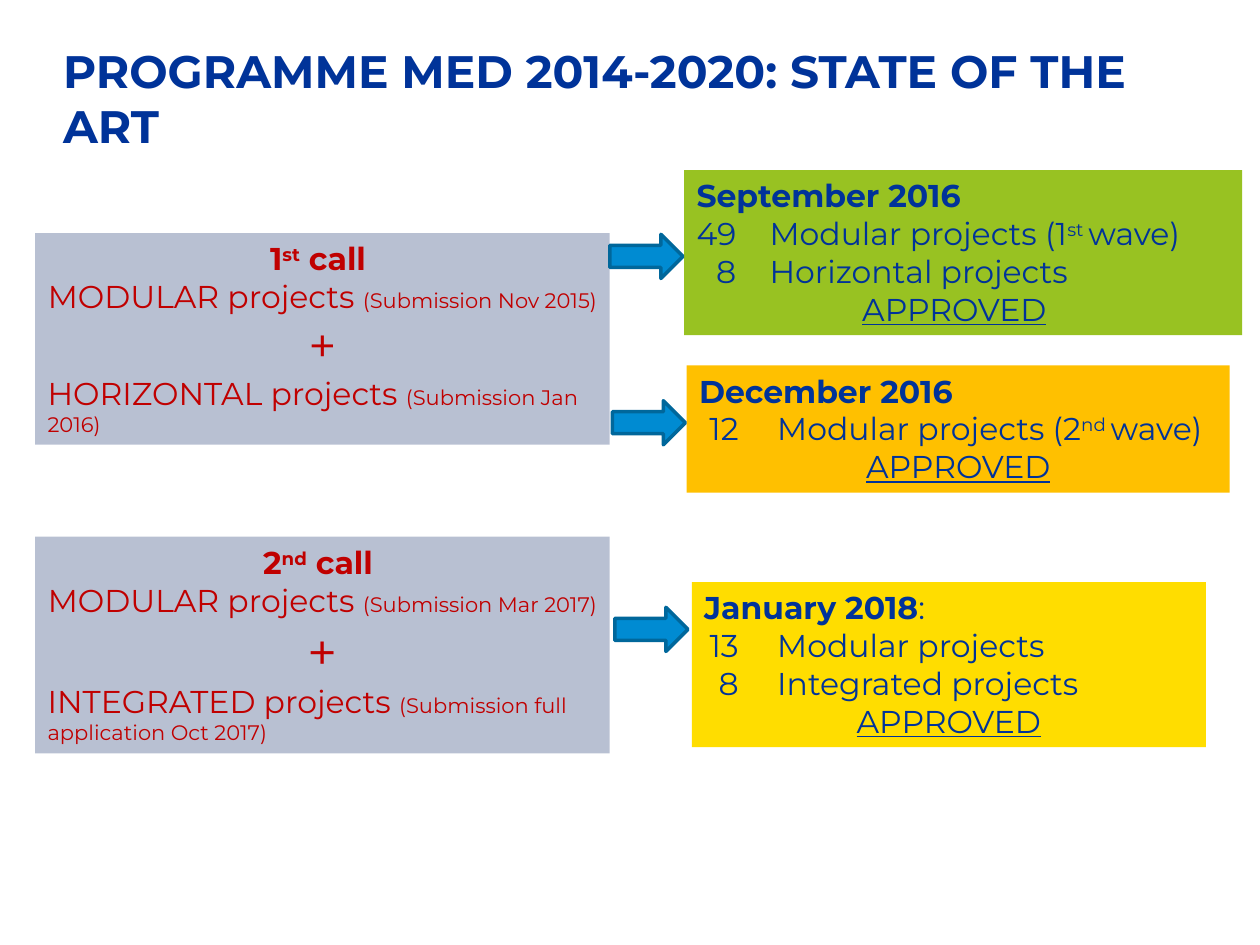
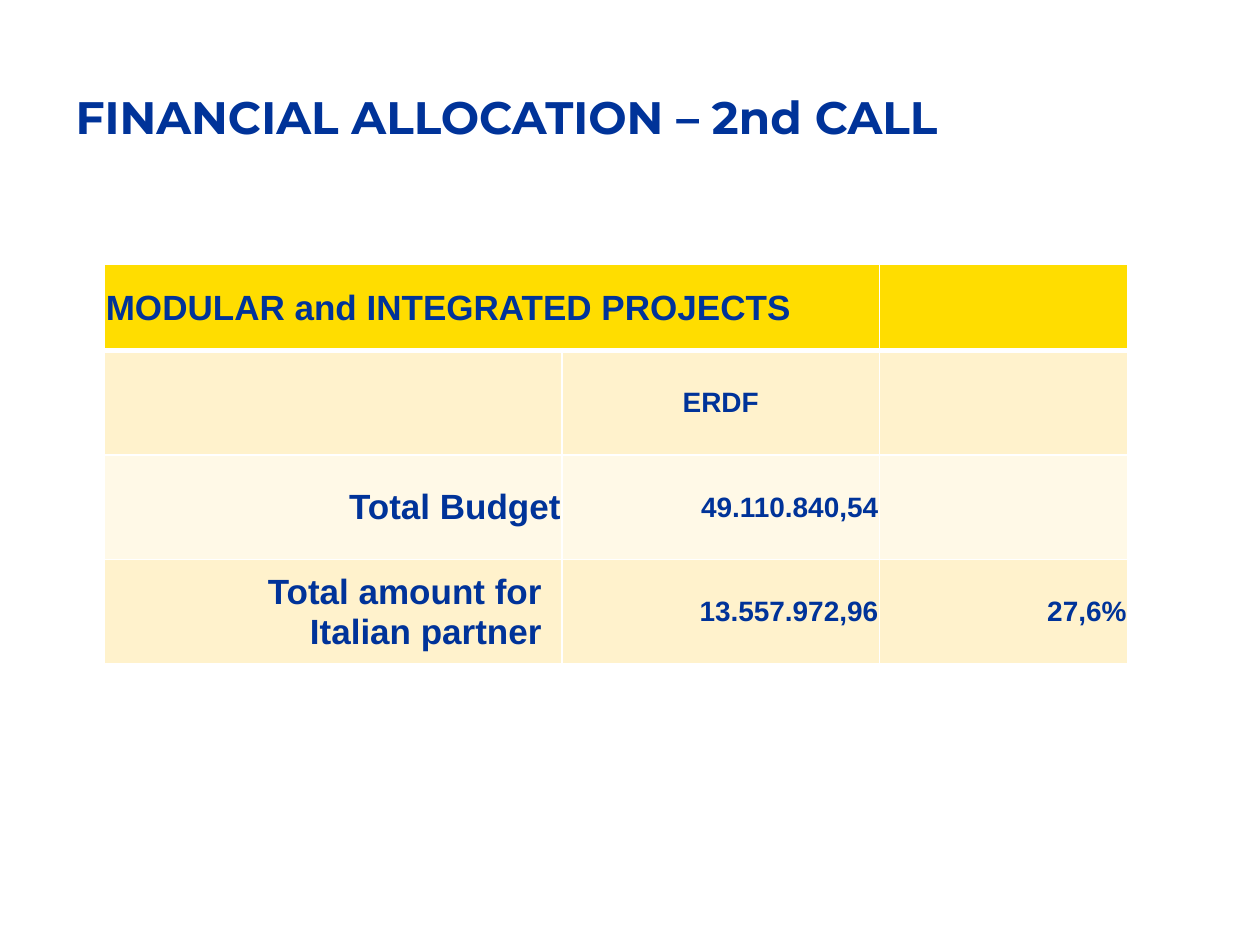
from dataclasses import dataclass, field
from itertools import product

from lxml.etree import SubElement
from pptx import Presentation
from pptx.dml.color import RGBColor
from pptx.enum.shapes import MSO_SHAPE as Shape
from pptx.enum.text import MSO_ANCHOR as Anchor, MSO_AUTO_SIZE as AutoSize, PP_ALIGN as Align
from pptx.oxml.ns import qn
from pptx.util import Inches, Pt


@dataclass(frozen=True)
class Theme:
    heading_font: str = "Montserrat"
    table_font: str = "Arial"
    navy: str = "003399"
    red: str = "C00000"
    call_fill: str = "002060"
    call_opacity: int = 28
    green: str = "98C222"
    orange: str = "FFC000"
    yellow: str = "FFDD00"
    arrow: str = "008BD2"
    arrow_edge: str = "00679B"
    row_dark: str = "FFF2CC"
    row_light: str = "FFF9E7"
    white: str = "FFFFFF"
    title_size: int = 26
    body_size: int = 18
    note_size: int = 12
    label_size: int = 20
    amount_size: int = 16


THEME = Theme()
BOLD = {"bold": True}
UNDERLINED = {"underline": True}
NOTE = {"size": Pt(THEME.note_size)}
RAISED = {"raised": True}
RAISED_BOLD = {"raised": True, "bold": True}


@dataclass
class Line:
    runs: list
    align: Align = Align.LEFT
    tabs: tuple = ()
    right_indent: float = 0
    base: dict = field(default_factory=dict)


def color(value):
    return RGBColor.from_string(value)


def apply(target, values):
    for name, value in values.items():
        setattr(target, name, value)


def set_tabs(properties, stops):
    tab_list = SubElement(properties, qn("a:tabLst"))
    for position, alignment in zip(stops, ("r", "l")):
        SubElement(tab_list, qn("a:tab"), pos=str(Inches(position)), algn=alignment)


def add_run(paragraph, text, ink, style):
    run = paragraph.add_run()
    run.text = text
    style = dict(style)
    if style.pop("raised", False):
        run.font._element.set("baseline", "30000")
    apply(run.font, style)
    run.font.color.rgb = color(ink)


def write(frame, lines, ink, defaults):
    for index, line in enumerate(lines):
        paragraph = frame.add_paragraph() if index else frame.paragraphs[0]
        paragraph.alignment = line.align
        properties = paragraph._p.get_or_add_pPr()
        if line.right_indent:
            properties.set("marR", str(Inches(line.right_indent)))
        if line.tabs:
            set_tabs(properties, line.tabs)
        for text, style in line.runs:
            if text == "\n":
                paragraph.add_line_break()
            else:
                add_run(paragraph, text, ink, {**defaults, **line.base, **style})


def add_titled_slide(deck, text, left, top, width):
    slide = deck.slides.add_slide(deck.slide_layouts[5])
    title = slide.shapes.title
    apply(title, {"left": Inches(left), "top": Inches(top),
                  "width": Inches(width), "height": Inches(1.25)})
    apply(title.text_frame, {"vertical_anchor": Anchor.MIDDLE, "word_wrap": True,
                             "auto_size": AutoSize.NONE})
    write(title.text_frame, [Line([(text, BOLD)])], THEME.navy,
          {"name": THEME.heading_font, "size": Pt(THEME.title_size)})
    return slide


def add_filled(slide, preset, box, fill):
    shape = slide.shapes.add_shape(preset, *map(Inches, box))
    shape.shadow.inherit = False
    shape.fill.solid()
    shape.fill.fore_color.rgb = color(fill)
    shape.line.fill.background()
    return shape


def add_panel(slide, box, fill, ink, lines):
    panel = add_filled(slide, Shape.RECTANGLE, box, fill)
    apply(panel.text_frame, {"vertical_anchor": Anchor.TOP, "word_wrap": True,
                             "auto_size": AutoSize.SHAPE_TO_FIT_TEXT})
    write(panel.text_frame, lines, ink,
          {"name": THEME.heading_font, "size": Pt(THEME.body_size), "bold": False})
    return panel


def add_call(slide, top, height, number, suffix, modular_note, plus_size, second, second_note):
    panel = add_panel(slide, (0.28, top, 4.56, height), THEME.call_fill, THEME.red, [
        Line([(number, BOLD), (suffix, RAISED_BOLD), (" call ", BOLD), ("\n", {}),
              ("MODULAR projects ", {}), (modular_note, NOTE)], Align.CENTER),
        Line([("+", {"size": Pt(plus_size)})], Align.CENTER),
        Line([(f"{second} projects ", {}), (second_note, NOTE)]),
    ])
    fill_color = panel._element.spPr.find(qn("a:solidFill"))[0]
    SubElement(fill_color, qn("a:alpha"), val=str(THEME.call_opacity * 1000))


def add_result(slide, box, fill, heading, counts, tabs, right_indent=0):
    approved = Line([("APPROVED", UNDERLINED)], Align.CENTER, right_indent=right_indent)
    projects = [Line([(f"\t{count} \t", {}), *runs], tabs=tabs) for count, runs in counts]
    add_panel(slide, box, fill, THEME.navy, [Line(heading), *projects, approved])


def add_arrow(slide, left, top):
    arrow = add_filled(slide, Shape.RIGHT_ARROW, (left, top, 0.58, 0.35), THEME.arrow)
    arrow.line.color.rgb = color(THEME.arrow_edge)
    arrow.line.width = Pt(2)


def set_borders(cell, bottom_width):
    properties = cell._tc.get_or_add_tcPr()
    for side, width in zip("LRTB", (1, 1, 1, bottom_width)):
        edge = SubElement(properties, qn(f"a:ln{side}"), w=str(Pt(width)))
        paint = SubElement(edge, qn("a:solidFill"))
        SubElement(paint, qn("a:srgbClr"), val=THEME.white)


def add_budget_table(slide, widths, heights, fills, contents):
    table = slide.shapes.add_table(len(heights), len(widths), Inches(0.83), Inches(2.1),
                                   Inches(sum(widths)), Inches(sum(heights))).table
    for column, width in zip(table.columns, widths):
        column.width = Inches(width)
    for row, height in zip(table.rows, heights):
        row.height = Inches(height)
    for row, column in product(range(len(heights)), range(len(widths))):
        cell = table.cell(row, column)
        set_borders(cell, 1 if row else 3)
        cell.fill.solid()
        cell.fill.fore_color.rgb = color(fills[row])
        if (row, column) in contents:
            edge = Inches(0.01)
            apply(cell, {"vertical_anchor": Anchor.MIDDLE, "margin_left": edge,
                         "margin_right": edge, "margin_top": edge, "margin_bottom": 0})
            size = THEME.amount_size if column else THEME.label_size
            write(cell.text_frame, contents[row, column], THEME.navy,
                  {"name": THEME.table_font, "size": Pt(size), "bold": True})
    table.cell(0, 0).merge(table.cell(0, 1))


def build_state_of_the_art(deck):
    slide = add_titled_slide(deck, "PROGRAMME MED 2014-2020: STATE OF THE ART", 0.4, 0.15, 9.35)
    add_result(slide, (5.43, 1.35, 4.43, 1.31), THEME.green, [("September 2016", BOLD)], [
        (49, [("Modular projects (1", {}), ("st ", RAISED), ("wave)", {})]),
        (8, [("Horizontal projects", {})]),
    ], (0.38, 0.58), right_indent=0.14)
    add_call(slide, 1.85, 1.68, "1", "st", "(Submission Nov 2015)", 28,
             "HORIZONTAL", "(Submission Jan 2016)")
    add_result(slide, (5.45, 2.9, 4.31, 1.01), THEME.orange, [("December 2016", BOLD)], [
        (12, [("Modular projects (2", {}), ("nd ", RAISED), ("wave)", {})]),
    ], (0.38, 0.62))
    add_call(slide, 4.26, 1.72, "2", "nd", "(Submission Mar 2017)", 30,
             "INTEGRATED", "(Submission full application Oct 2017)")
    add_result(slide, (5.49, 4.62, 4.08, 1.31), THEME.yellow, [("January 2018", BOLD), (":", {})], [
        (13, [("Modular projects", {})]),
        (8, [("Integrated projects", {})]),
    ], (0.34, 0.58))
    for left, top in ((4.84, 1.86), (4.86, 3.18), (4.88, 4.82)):
        add_arrow(slide, left, top)


def build_financial_allocation(deck):
    slide = add_titled_slide(deck, "FINANCIAL ALLOCATION – 2nd CALL", 0.5, 0.3, 9)
    right = Align.RIGHT
    add_budget_table(
        slide, (3.63, 2.52, 1.97), (0.68, 0.83, 0.83, 0.83),
        (THEME.yellow, THEME.row_dark, THEME.row_light, THEME.row_dark),
        {
            (0, 0): [Line([("MODULAR and INTEGRATED PROJECTS", {})])],
            (1, 1): [Line([("ERDF", {})], Align.CENTER)],
            (2, 0): [Line([("Total Budget", {})], right)],
            (2, 1): [Line([("49.110.840,54", {})], right)],
            (3, 0): [Line([("Total amount for", {})], right, right_indent=0.15),
                     Line([("Italian partner", {})], right)],
            (3, 1): [Line([("13.557.972,96", {})], right)],
            (3, 2): [Line([("27,6%", {})], right)],
        })


def main():
    deck = Presentation()
    apply(deck, {"slide_width": Inches(10), "slide_height": Inches(7.5)})
    build_state_of_the_art(deck)
    build_financial_allocation(deck)
    deck.save("out.pptx")


if __name__ == "__main__":
    main()
